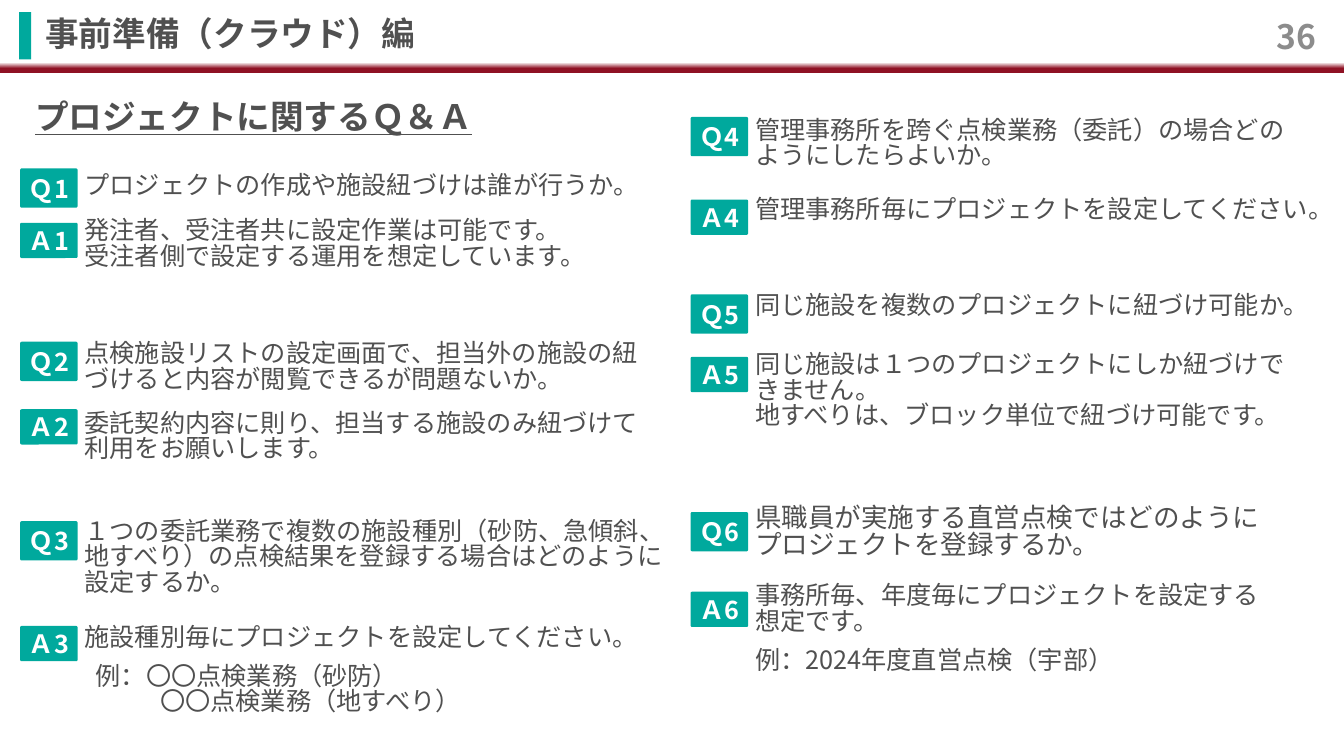
from pptx import Presentation
from pptx.dml.color import RGBColor
from pptx.enum.shapes import MSO_SHAPE as Preset
from pptx.enum.text import MSO_ANCHOR as Anchor, PP_ALIGN as Align
from pptx.oxml.ns import qn
from pptx.util import Inches, Pt
from lxml.etree import SubElement

FONT = "Noto Sans CJK JP"
TEAL = RGBColor(0x00, 0xA9, 0x9D)
WINE = RGBColor(0x8F, 0x12, 0x24)
INK = RGBColor(0x50, 0x50, 0x50)
GRAY = RGBColor(0x8C, 0x8C, 0x8C)
WHITE = RGBColor(0xFF, 0xFF, 0xFF)

LEFT_COLUMN = [
    ("Ｑ1", 1.67, 1.68, 5.93, ["プロジェクトの作成や施設紐づけは誰が行うか。"]),
    ("Ａ1", 2.21, 2.13, 6.08,
     ["発注者、受注者共に設定作業は可能です。\v受注者側で設定する運用を想定しています。"]),
    ("Ｑ2", 3.39, 3.35, 5.93,
     ["点検施設リストの設定画面で、担当外の施設の紐づけると内容が閲覧できるが問題ないか。"]),
    ("Ａ2", 4.06, 4.04, 6.08,
     ["委託契約内容に則り、担当する施設のみ紐づけて\v利用をお願いします。"]),
    ("Ｑ3", 5.17, 5.11, 5.93,
     ["１つの委託業務で複数の施設種別（砂防、急傾斜、地すべり）の点検結果を登録する場合は"
      "どのように設定するか。"]),
    ("Ａ3", 6.21, 6.16, 6.08,
     ["施設種別毎にプロジェクトを設定してください。",
      "例：〇〇点検業務（砂防）", "〇〇点検業務（地すべり）"]),
]
RIGHT_COLUMN = [
    ("Ｑ4", 1.16, 1.13, 5.59,
     ["管理事務所を跨ぐ点検業務（委託）の場合どのようにしたらよいか。"]),
    ("Ａ4", 1.98, 1.92, 5.84, ["管理事務所毎にプロジェクトを設定してください。"]),
    ("Ｑ5", 2.92, 2.87, 6.09, ["同じ施設を複数のプロジェクトに紐づけ可能か。"]),
    ("Ａ5", 3.54, 3.46, 5.59,
     ["同じ施設は１つのプロジェクトにしか紐づけできません。\v"
      "地すべりは、ブロック単位で紐づけ可能です。"]),
    ("Ｑ6", 5.08, 4.97, 5.37,
     ["県職員が実施する直営点検ではどのようにプロジェクトを登録するか。"]),
    ("Ａ6", 5.87, 5.75, 5.26,
     ["事務所毎、年度毎にプロジェクトを設定する想定です。", "例：2024年度直営点検（宇部）"]),
]
EXAMPLE_INDENTS = {"例：〇〇点検業務（砂防）": 0.11, "〇〇点検業務（地すべり）": 0.75}


def style_runs(paragraph, size, color, bold=False, underline=None):
    """Format every run of a paragraph, East Asian font included."""
    for run in paragraph.runs:
        font = run.font
        font.name, font.size, font.bold = FONT, Pt(size), bold
        font.underline = underline
        font.color.rgb = color
        SubElement(run._r.get_or_add_rPr(), qn("a:ea"), typeface=FONT)


def add_block(slide, preset, left, top, width, height, color=TEAL):
    """Add a flat filled shape without outline."""
    block = slide.shapes.add_shape(
        preset, Inches(left), Inches(top), Inches(width), Inches(height))
    block.shadow.inherit = False
    block.line.fill.background()
    block.fill.solid()
    block.fill.fore_color.rgb = color
    return block


def fill_heading(heading, text, left_inset, underline=None):
    """Write a bold heading, centred vertically in its box."""
    frame = heading.text_frame
    frame.word_wrap = True
    frame.vertical_anchor = Anchor.MIDDLE
    frame.margin_left, frame.margin_right = Inches(left_inset), Inches(0.1)
    frame.margin_top, frame.margin_bottom = Inches(0.12), Inches(0.05)
    frame.text = text
    paragraph = frame.paragraphs[0]
    paragraph.alignment = Align.LEFT
    paragraph.line_spacing = 0.9
    style_runs(paragraph, 24, INK, True, underline)


def add_header(slide, left, top, width):
    """Build the title strip with its rule, accent bar and page number."""
    rule = add_block(slide, Preset.RECTANGLE, left, top + 0.62, width, 0.1)
    rule.fill.gradient()
    rule.fill.gradient_angle = 270
    for stop, position, color in zip(rule.fill.gradient_stops, (0, 0.58), (WHITE, WINE)):
        stop.position = position
        stop.color.rgb = color
    add_block(slide, Preset.RECTANGLE, left + 0.19, top + 0.12, 0.12, 0.47)
    title = slide.shapes.title
    title.left, title.top = Inches(left + 0.02), Inches(top + 0.01)
    title.width, title.height = Inches(11.14), Inches(0.62)
    fill_heading(title, "事前準備（クラウド）編", 0.43)
    page = slide.shapes.add_textbox(
        Inches(left + width - 3.18), Inches(top + 0.16), Inches(3), Inches(0.4))
    page.text_frame.vertical_anchor = Anchor.MIDDLE
    page.text_frame.word_wrap = True
    page.text_frame.text = "36"
    number = page.text_frame.paragraphs[0]
    number.alignment = Align.RIGHT
    style_runs(number, 24, GRAY, True)


def add_badge(slide, label, left, top):
    """Add the teal label of a question or an answer."""
    height = 0.39 if label.startswith("Ｑ") else 0.35
    badge = add_block(slide, Preset.ROUNDED_RECTANGLE, left, top, 0.57, height)
    badge.adjustments[0] = 0.042
    frame = badge.text_frame
    frame.margin_left = frame.margin_right = Inches(0.04)
    frame.margin_top = frame.margin_bottom = Inches(0.04)
    frame.vertical_anchor = Anchor.MIDDLE
    frame.text = label
    frame.paragraphs[0].alignment = Align.CENTER
    style_runs(frame.paragraphs[0], 18, WHITE, True)


def add_statement(slide, lines, left, top, width, size):
    """Add the wording of a question or an answer."""
    statement = slide.shapes.add_textbox(
        Inches(left), Inches(top), Inches(width), Inches(0.36 * len(lines) + 0.4))
    frame = statement.text_frame
    frame.word_wrap = True
    frame.text = "\n".join(lines)
    for index, paragraph in enumerate(frame.paragraphs):
        paragraph.line_spacing = 0.84
        paragraph.space_before = Pt(10 if index == 1 else 0)
        indent = EXAMPLE_INDENTS.get(paragraph.text, 0)
        paragraph._p.get_or_add_pPr().set("marL", str(Inches(indent)))
        style_runs(paragraph, size, INK)


def add_column(slide, entries, left):
    """Build one column of questions and answers."""
    for label, badge_top, text_top, width, lines in entries:
        add_statement(slide, lines, left + 0.54, text_top, width, 19 if label == "Ｑ6" else 18)
        add_badge(slide, label, left, badge_top)


def main():
    """Build and save the slide."""
    deck = Presentation()
    deck.slide_width, deck.slide_height = Inches(13.33), Inches(7.5)
    slide = deck.slides.add_slide(deck.slide_layouts[5])
    add_header(slide, 0, 0, 13.33)
    topic = slide.shapes.add_textbox(Inches(0.25), Inches(0.83), Inches(4.54), Inches(0.62))
    fill_heading(topic, "プロジェクトに関するＱ＆Ａ", 0.1, True)
    add_column(slide, LEFT_COLUMN, 0.2)
    add_column(slide, RIGHT_COLUMN, 6.85)
    deck.save("out.pptx")


if __name__ == "__main__":
    main()
